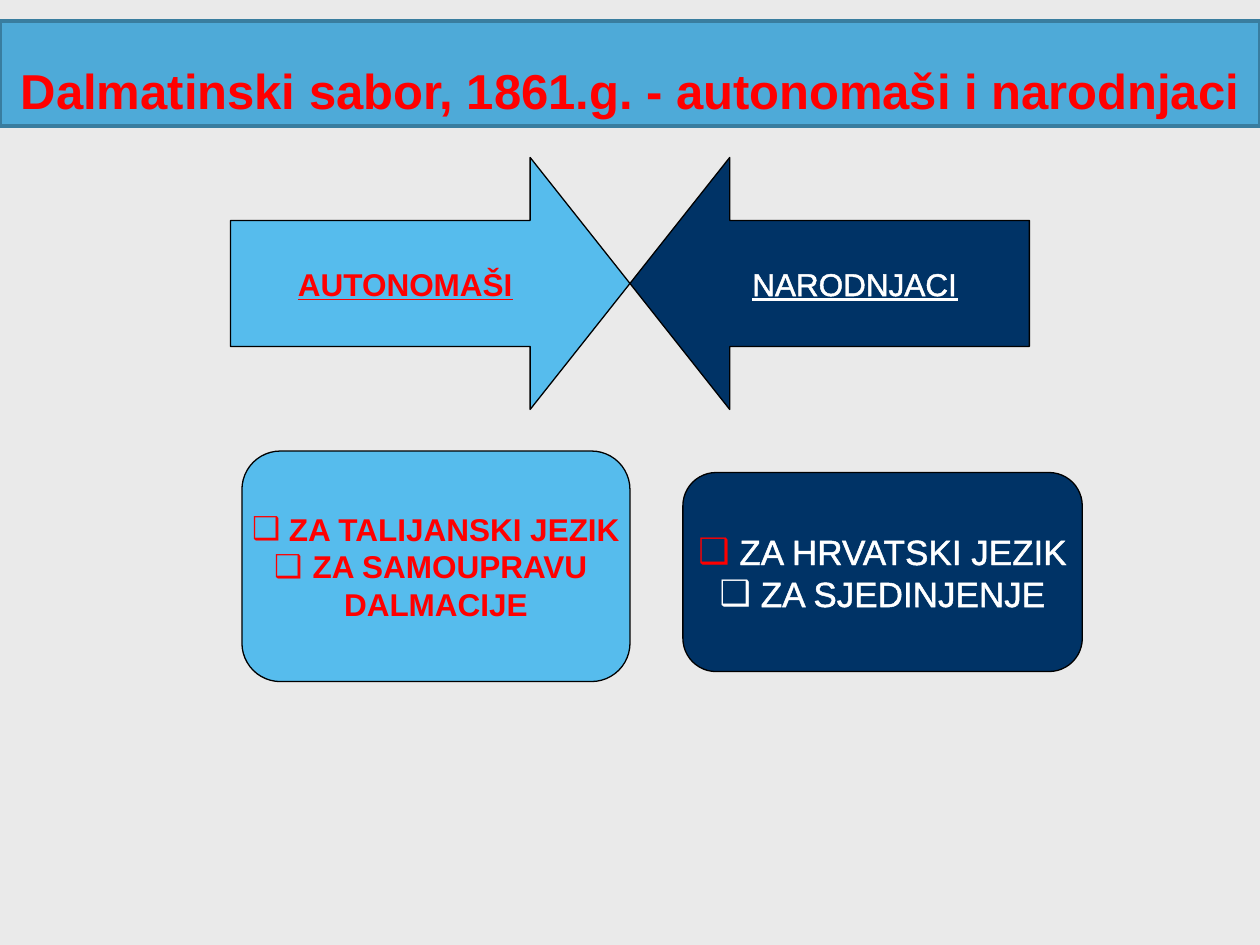
from lxml import etree
from pptx import Presentation
from pptx.dml.color import RGBColor
from pptx.enum.shapes import MSO_SHAPE
from pptx.enum.text import MSO_ANCHOR, PP_ALIGN
from pptx.oxml.ns import qn
from pptx.util import Inches, Pt

RECTANGLE = MSO_SHAPE.RECTANGLE
RIGHT_ARROW = MSO_SHAPE.RIGHT_ARROW
LEFT_ARROW = MSO_SHAPE.LEFT_ARROW
ROUNDED = MSO_SHAPE.ROUNDED_RECTANGLE
MIDDLE = MSO_ANCHOR.MIDDLE
BOTTOM = MSO_ANCHOR.BOTTOM
CENTER = PP_ALIGN.CENTER

RED = "FF0000"
WHITE = "FFFFFF"
BLACK = "000000"
LIGHT_BLUE = "56BCED"
NAVY = "003366"


def color(value):
    return RGBColor.from_string(value)


def add_text(para, text, size=18, fill=RED, bold=False, underline=False, outline=None, outline_width=1.45):
    span = para.add_run()
    span.text = text
    span.font.name = "Arial"
    span.font.size = Pt(size)
    span.font.bold = bold
    span.font.underline = underline
    span.font.color.rgb = color(fill)
    if outline:
        line = etree.Element(qn("a:ln"), w=str(Pt(outline_width)))
        solid = etree.SubElement(line, qn("a:solidFill"))
        etree.SubElement(solid, qn("a:srgbClr"), val=outline)
        span.font._element.insert(0, line)


deck = Presentation()
deck.slide_width = Inches(10)
deck.slide_height = Inches(7.5)
page = deck.slides.add_slide(deck.slide_layouts[6])
page.background.fill.solid()
page.background.fill.fore_color.rgb = color("EAEAEA")

red_bold = dict(fill=RED, bold=True)
white_outlined = dict(fill=WHITE, outline=WHITE)
title_format = dict(size=28, fill=RED, bold=True, outline=BLACK, outline_width=1)

shapes = [
    (RECTANGLE, (0, 0.17, 10, 0.83), [], "4EAAD8", "397D9F", 2.25, BOTTOM, [
        (False, [("Dalmatinski sabor, 1861.g. - autonomaši i narodnjaci", title_format)]),
    ]),
    (RIGHT_ARROW, (1.83, 1.25, 3.17, 2), [0.5, 0.396], LIGHT_BLUE, BLACK, 0.75, MIDDLE, [
        (False, [("AUTONOMAŠI", dict(red_bold, underline=True))]),
    ]),
    (LEFT_ARROW, (5, 1.25, 3.17, 2), [0.5, 0.396], NAVY, BLACK, 0.75, MIDDLE, [
        (False, [("NARODNJACI", dict(white_outlined, underline=True))]),
    ]),
    (ROUNDED, (1.92, 3.58, 3.08, 1.83), [0.167], LIGHT_BLUE, BLACK, 0.75, MIDDLE, [
        (True, [(" ZA TALIJANSKI JEZIK", red_bold)]),
        (True, [(" ZA SAMOUPRAVU ", red_bold)]),
        (False, [("DALMACIJE", red_bold)]),
    ]),
    (ROUNDED, (5.42, 3.75, 3.17, 1.58), [0.167], NAVY, BLACK, 0.75, MIDDLE, [
        (True, [(" ", dict(red_bold, size=20)), ("ZA HRVATSKI JEZIK", dict(white_outlined, size=20))]),
        (True, [(" ZA SJEDINJENJE", dict(white_outlined, size=20))]),
    ]),
]

for preset, place, adjustments, fill, line, width, anchor, paragraphs in shapes:
    box = page.shapes.add_shape(preset, *[Inches(length) for length in place])
    box.shadow.inherit = False
    for index, value in enumerate(adjustments):
        box.adjustments[index] = value
    box.fill.solid()
    box.fill.fore_color.rgb = color(fill)
    box.line.color.rgb = color(line)
    box.line.width = Pt(width)
    frame = box.text_frame
    frame.word_wrap = preset == RECTANGLE
    frame.vertical_anchor = anchor
    for index, (bulleted, spans) in enumerate(paragraphs):
        para = frame.add_paragraph() if index else frame.paragraphs[0]
        para.alignment = CENTER
        if bulleted:
            properties = para._p.get_or_add_pPr()
            etree.SubElement(properties, qn("a:buFont"), typeface="Arial")
            etree.SubElement(properties, qn("a:buChar"), char="❑")
        for text, text_format in spans:
            add_text(para, text, **text_format)

deck.save("out.pptx")
